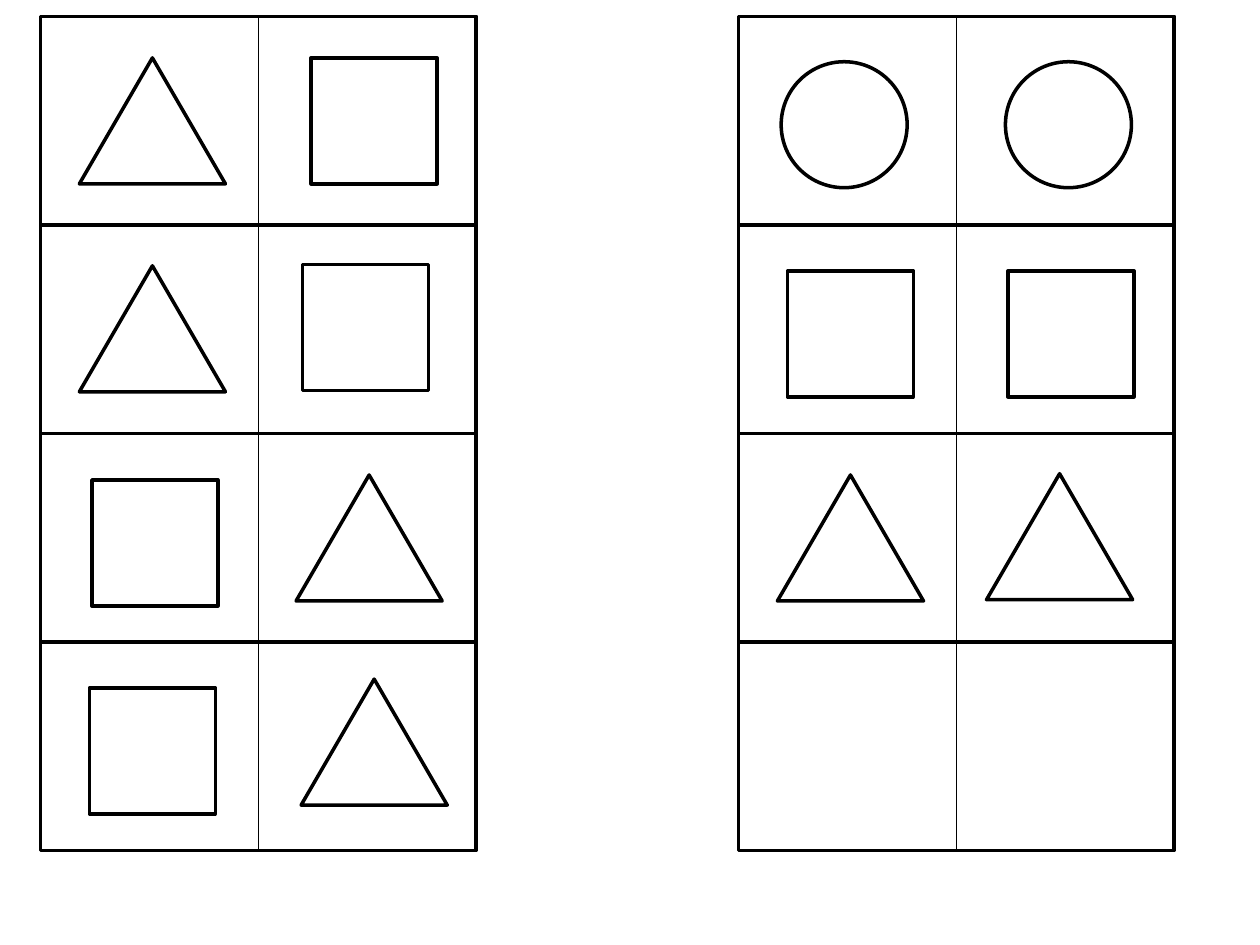
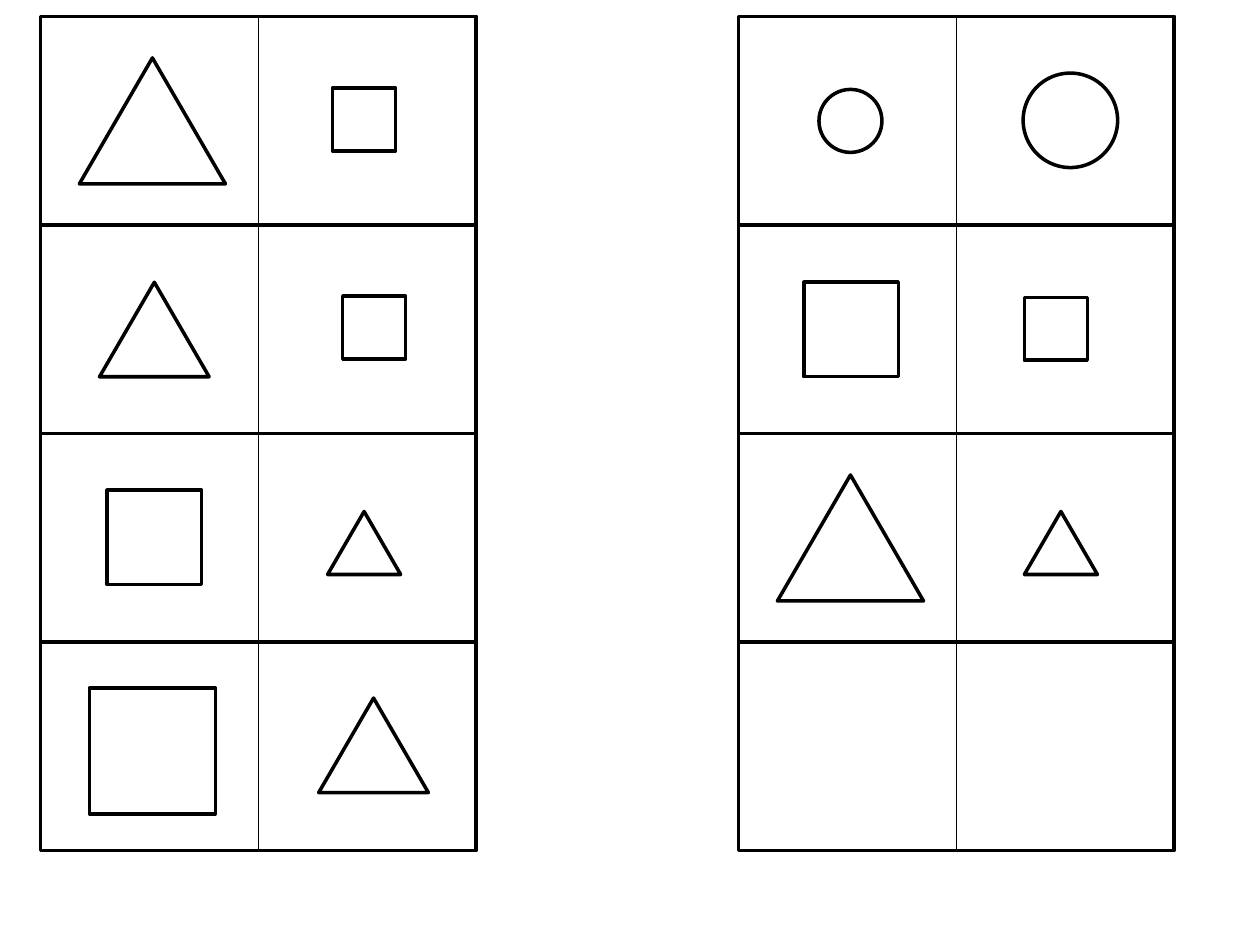
from dataclasses import dataclass

from lxml.etree import SubElement
from pptx import Presentation
from pptx.dml.color import RGBColor
from pptx.enum.shapes import MSO_CONNECTOR, MSO_SHAPE
from pptx.oxml.ns import qn
from pptx.util import Inches, Pt

# Content: per page, per column, one domino a row; a symbol is (kind, size, left, top)
DOMINO_PAGES = [
    [
        [
            [("triangle", 1, 0.63, 0.46), ("square", 1, 2.47, 0.46)],
            [("triangle", 1, 0.63, 2.11), ("square", 1, 2.4, 2.1)],
            [("square", 1, 0.73, 3.81), ("triangle", 1, 2.35, 3.77)],
            [("square", 1, 0.71, 5.46), ("triangle", 1, 2.39, 5.39)],
        ],
        [
            [("circle", 1, 6.2, 0.49), ("circle", 1, 7.98, 0.49)],
            [("square", 1, 6.25, 2.15), ("square", 1, 8, 2.15)],
            [("triangle", 1, 6.17, 3.77), ("triangle", 1, 7.83, 3.76)],
            [],
        ],
    ],
    [
        [
            [("triangle", 1, 0.63, 0.46), ("square", 0.5, 2.64, 0.7)],
            [("triangle", 0.75, 0.79, 2.24), ("square", 0.5, 2.72, 2.35)],
            [("square", 0.75, 0.85, 3.89), ("triangle", 0.5, 2.6, 4.06)],
            [("square", 1, 0.71, 5.46), ("triangle", 0.75, 2.53, 5.54)],
        ],
        [
            [("circle", 0.5, 6.5, 0.71), ("circle", 0.75, 8.12, 0.58)],
            [("square", 0.75, 6.38, 2.24), ("square", 0.5, 8.13, 2.36)],
            [("triangle", 1, 6.17, 3.77), ("triangle", 0.5, 8.13, 4.06)],
            [],
        ],
    ],
]

# Each kind of symbol: preset shape and width for a height of one
SYMBOLS = {
    "triangle": (MSO_SHAPE.ISOSCELES_TRIANGLE, 1.16),
    "square": (MSO_SHAPE.RECTANGLE, 1),
    "circle": (MSO_SHAPE.OVAL, 1),
}


@dataclass(frozen=True)
class Theme:
    ink: RGBColor = RGBColor(0, 0, 0)
    outline: float = 2
    divider: float = 0.75


THEME = Theme()

# Layout in inches
COLUMN_LEFTS = (0.32, 5.86)
GRID_TOP, GRID_BOTTOM, ROW_COUNT = 0.13, 6.75, 4
DOMINO_WIDTH = 3.46
DOMINO_HEIGHT = (GRID_BOTTOM - GRID_TOP) / ROW_COUNT


def add_outline(group, preset, left, top, width, height):
    shape = group.shapes.add_shape(
        preset, Inches(left), Inches(top), Inches(width), Inches(height))
    shape.shadow.inherit = False
    shape.fill.background()
    shape.line.color.rgb = THEME.ink
    shape.line.width = Pt(THEME.outline)
    return shape


def add_divider(group, frame):
    middle = frame.left + frame.width // 2
    divider = group.shapes.add_connector(
        MSO_CONNECTOR.STRAIGHT, middle, frame.top, middle, frame.top + frame.height)
    divider.begin_connect(frame, 0)
    divider.end_connect(frame, 2)
    divider.line.color.rgb = THEME.ink
    divider.line.width = Pt(THEME.divider)
    SubElement(divider.element.spPr, qn("a:effectLst"))


def add_domino(page, left, top, symbols):
    group = page.shapes.add_group_shape()
    frame = add_outline(group, MSO_SHAPE.RECTANGLE, left, top, DOMINO_WIDTH, DOMINO_HEIGHT)
    add_divider(group, frame)
    for kind, size, symbol_left, symbol_top in symbols:
        preset, aspect = SYMBOLS[kind]
        add_outline(group, preset, symbol_left, symbol_top, size * aspect, size)


def main():
    deck = Presentation()
    deck.slide_width, deck.slide_height = Inches(10), Inches(7.5)
    for columns in DOMINO_PAGES:
        page = deck.slides.add_slide(deck.slide_layouts[6])
        for left, dominoes in zip(COLUMN_LEFTS, columns):
            for row, symbols in enumerate(dominoes):
                add_domino(page, left, GRID_TOP + row * DOMINO_HEIGHT, symbols)
    deck.save("out.pptx")


if __name__ == "__main__":
    main()
